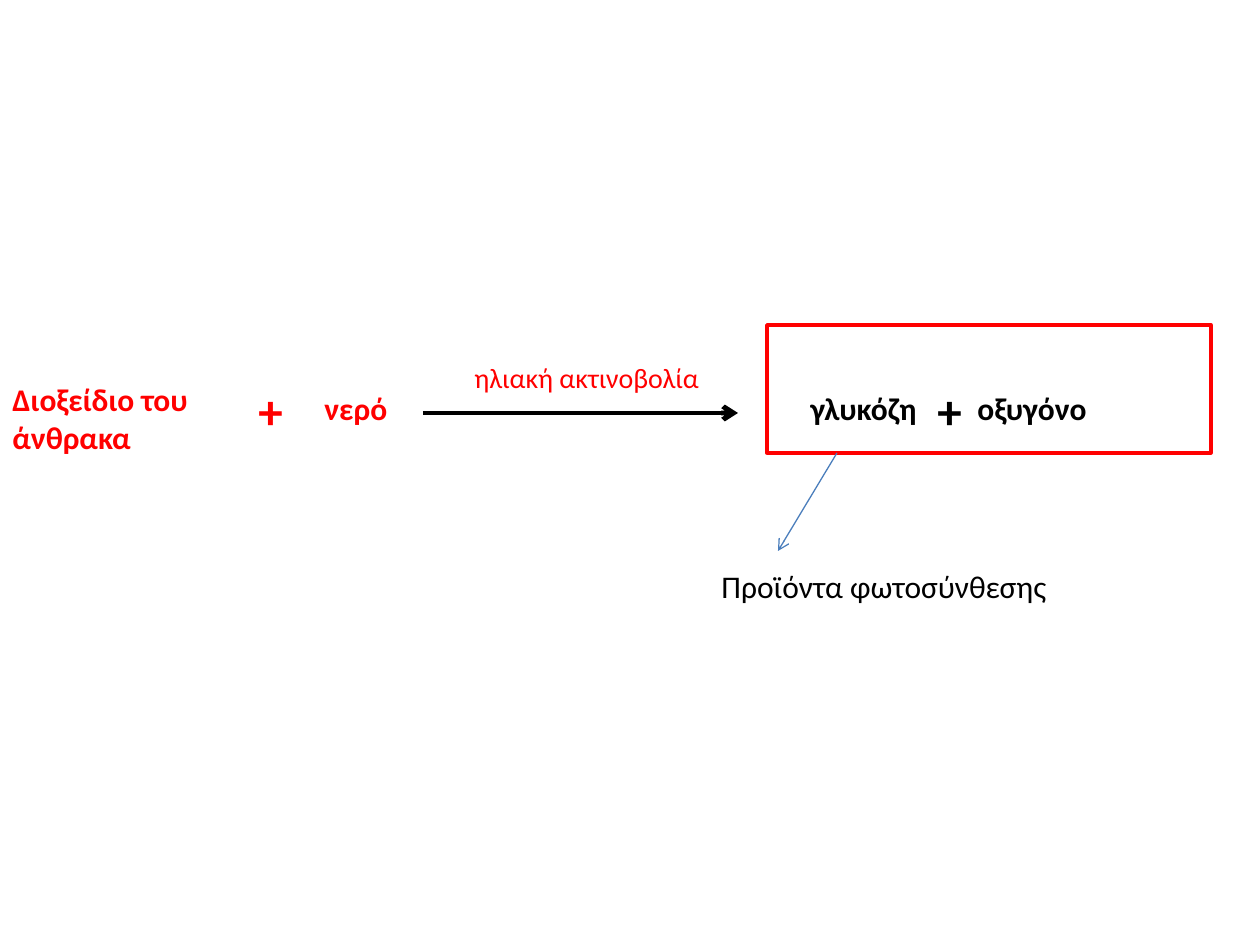
from lxml import etree
from pptx import Presentation
from pptx import util as u
from pptx.dml.color import RGBColor
from pptx.enum import shapes, text
from pptx.oxml.ns import qn

PX = 914400 / 126
COLORS = {"red": "FF0000", "black": "000000", "blue": "4B7EBC"}


def emu(*lengths):
    return [u.Emu(round(length * PX)) for length in lengths]


def rgb(name):
    return RGBColor.from_string(COLORS[name])


class Painter:
    font = "Calibri"

    def __init__(self, page):
        self.page = page

    def label(self, place, words, color, size=18, bold=False, wrap=True):
        box = self.page.shapes.add_textbox(*emu(*place))
        frame = box.text_frame
        frame.word_wrap = wrap
        frame.auto_size = text.MSO_AUTO_SIZE.SHAPE_TO_FIT_TEXT
        span = frame.paragraphs[0].add_run()
        span.text = words
        span.font.name = self.font
        span.font.size = u.Pt(size)
        span.font.bold = bold
        span.font.color.rgb = rgb(color)

    def outline(self, place, color, weight):
        box = self.page.shapes.add_shape(
            shapes.MSO_SHAPE.RECTANGLE, *emu(*place))
        box.shadow.inherit = False
        box.fill.background()
        box.line.color.rgb = rgb(color)
        box.line.width = u.Pt(weight)

    def arrow(self, start, end, color, weight):
        arrow = self.page.shapes.add_connector(
            shapes.MSO_CONNECTOR.STRAIGHT, *emu(*start, *end))
        arrow.line.color.rgb = rgb(color)
        arrow.line.width = u.Pt(weight)
        properties = arrow._element.spPr
        line = properties.find(qn("a:ln"))
        etree.SubElement(line, qn("a:tailEnd"), type="arrow")
        etree.SubElement(properties, qn("a:effectLst"))


def main():
    deck = Presentation()
    deck.slide_width, deck.slide_height = emu(1260, 945)
    painter = Painter(deck.slides.add_slide(deck.slide_layouts[6]))

    # Reactants
    painter.label((0, 374, 217, 89), "Διοξείδιο του άνθρακα", "red", bold=True)
    painter.label((305, 383, 96, 50), " νερό", "red", bold=True, wrap=False)

    # Reaction arrow and its condition
    painter.arrow((423, 413), (738, 413), "black", 2.75)
    painter.label((462, 354, 253, 47), "ηλιακή ακτινοβολία", "red", 16,
                  wrap=False)

    # Products
    for left, width, words in ((798, 132, "γλυκόζη"), (965, 135, "οξυγόνο")):
        painter.label((left, 383, width, 50), words, "black", bold=True,
                      wrap=False)

    # Plus signs
    for left, color in ((246, "red"), (925, "black")):
        painter.label((left, 374, 39, 72), "+", color, 28, bold=True)

    # Frame round the products and its caption
    painter.outline((767, 325, 444, 128), "red", 2)
    painter.arrow((837, 453), (778, 551), "blue", 0.75)
    painter.label((709, 561, 394, 50), "Προϊόντα φωτοσύνθεσης", "black")

    deck.save("out.pptx")


if __name__ == "__main__":
    main()
